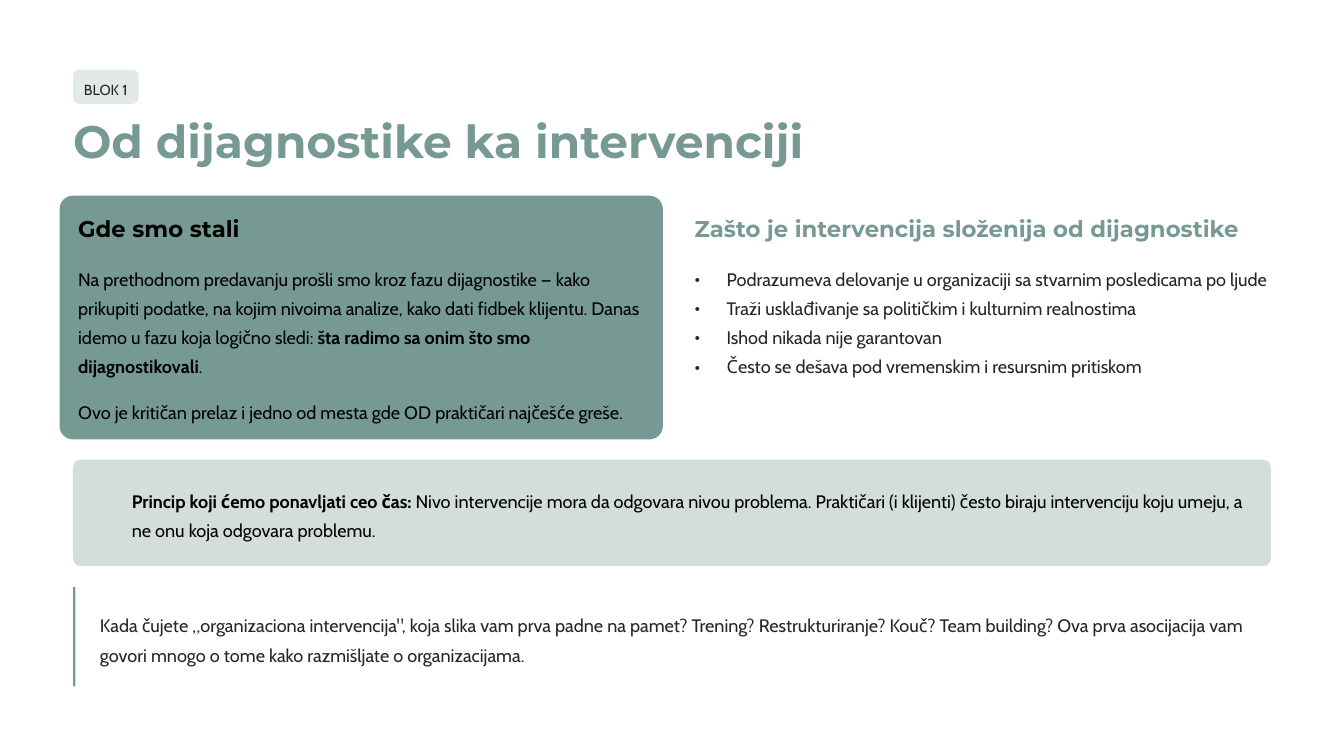
import pptx
import pptx.util
import pptx.dml.color
import pptx.enum.shapes
import pptx.oxml.ns
import lxml.etree

Pt = pptx.util.Pt
KIND = pptx.enum.shapes.MSO_SHAPE

SAGE, PALE, MIST = "769993", "D3DEDC", "E2E9E8"
BLACK, INK, WHITE = "000000", "272525", "FFFFFF"
LEFT, COL, SIDE = 62.6, 67, 595.4
HEAD, BODY = 183.6, 223.6

PANELS = [
    (KIND.ROUNDED_RECTANGLE, (LEFT, 59.6, 56.2, 29.5), MIST, 0.179),
    (KIND.ROUNDED_RECTANGLE, (51.1, 167.8, 517, 208.8), SAGE, 0.054),
    (KIND.ROUNDED_RECTANGLE, (LEFT, 394, 1026.7, 91.4), PALE, 0.072),
    (KIND.RECTANGLE, (LEFT, 503.3, 2, 85), SAGE, None),
]

STYLES = {
    "tag": ("Cabin", 12.5, 20, False),
    "title": ("Montserrat", 39, 48.5, True),
    "head": ("Montserrat", 19.5, 24, True),
    "body": ("Cabin", 15.5, 25, False),
}

TEXTS = [
    ("tag", (72, 64.4, 45, 20.2), INK, False, [["BLOK 1"]]),
    ("title", (LEFT, 95.3, 660, 49), SAGE, False,
     [["Od dijagnostike ka intervenciji"]]),
    ("head", (COL, HEAD, 195.1, 24.5), BLACK, False, [["Gde smo stali"]]),
    ("body", (COL, BODY, 486, 100.1), BLACK, True, [[
        "Na prethodnom predavanju prošli smo kroz fazu dijagnostike — kako "
        "prikupiti podatke, na kojim nivoima analize, kako dati fidbek "
        "klijentu. Danas idemo u fazu koja logično sledi: ",
        ("šta radimo sa onim što smo dijagnostikovali",), "."]]),
    ("body", (COL, 337.7, 486, 25.2), BLACK, False, [[
        "Ovo je kritičan prelaz i jedno od mesta gde OD praktičari "
        "najčešće greše."]]),
    ("head", (SIDE, HEAD, 494.6, 24.5), SAGE, False,
     [["Zašto je intervencija složenija od dijagnostike"]]),
    ("body", (SIDE, BODY, 494.6, 116.6), INK, True, [
        ["Podrazumeva delovanje u organizaciji sa stvarnim posledicama po ljude"],
        ["Traži usklađivanje sa političkim i kulturnim realnostima"],
        ["Ishod nikada nije garantovan"],
        ["Često se dešava pod vremenskim i resursnim pritiskom"]]),
    ("body", (113, 413.9, 960.5, 49.7), BLACK, True, [[
        ("Princip koji ćemo ponavljati ceo čas:",),
        " Nivo intervencije mora da odgovara nivou problema. Praktičari "
        "(i klijenti) često biraju intervenciju koju umeju, a ne onu koja "
        "odgovara problemu."]]),
    ("body", (85.7, 520.6, 1003.7, 49.7), INK, True, [[
        "Kada čujete „organizaciona intervencija\", koja slika vam prva padne "
        "na pamet? Trening? Restrukturiranje? Kouč? Team building? Ova prva "
        "asocijacija vam govori mnogo o tome kako razmišljate o "
        "organizacijama."]]),
]


def paint(fmt, tone):
    if hasattr(fmt, "solid"):
        fmt.solid()
        fmt = fmt.fore_color
    fmt.rgb = pptx.dml.color.RGBColor.from_string(tone)


def place(box):
    return [Pt(n) for n in box]


def panel(slide, kind, box, tone, curve):
    shape = slide.shapes.add_shape(kind, *place(box))
    shape.shadow.inherit = False
    paint(shape.fill, tone)
    shape.line.fill.background()
    if curve:
        shape.adjustments[0] = curve


def bullet(para, face, size):
    props = para._p.get_or_add_pPr()
    props.set("marL", str(Pt(27.4)))
    props.set("indent", str(-Pt(27.4)))
    for tag, key, value in (("a:buSzPct", "val", "100000"),
                            ("a:buFont", "typeface", face),
                            ("a:buChar", "char", "•")):
        mark = lxml.etree.SubElement(props, pptx.oxml.ns.qn(tag))
        mark.set(key, value)
    para.font.size = Pt(size)


def write(slide, style, box, tone, wrap, paras):
    face, size, pitch, bold = STYLES[style]
    frame = slide.shapes.add_textbox(*place(box)).text_frame
    frame.word_wrap = wrap
    frame.margin_left = frame.margin_right = 0
    frame.margin_top = frame.margin_bottom = 0
    for i, runs in enumerate(paras):
        para = frame.add_paragraph() if i else frame.paragraphs[0]
        para.line_spacing = Pt(pitch)
        if len(paras) > 1:
            bullet(para, face, size)
        for part in runs:
            strong = isinstance(part, tuple)
            run = para.add_run()
            run.text = part[0] if strong else part
            run.font.name = face
            run.font.size = Pt(size)
            run.font.bold = bold or strong
            paint(run.font.color, tone)


def main():
    deck = pptx.Presentation()
    deck.slide_width, deck.slide_height = Pt(1152), Pt(648)
    slide = deck.slides.add_slide(deck.slide_layouts[6])
    paint(slide.background.fill, WHITE)
    for item in PANELS:
        panel(slide, *item)
    for item in TEXTS:
        write(slide, *item)
    deck.save("out.pptx")


if __name__ == "__main__":
    main()
